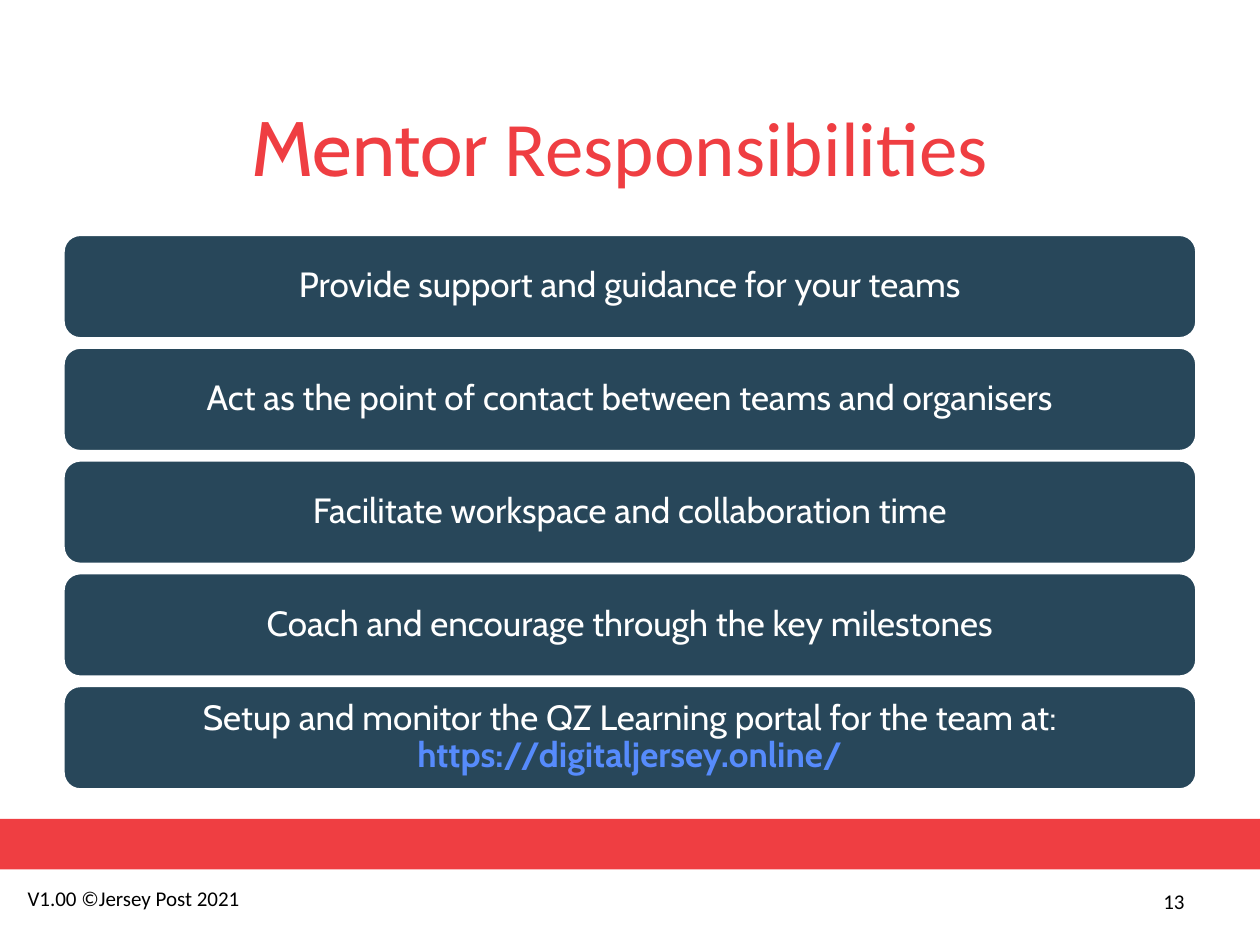
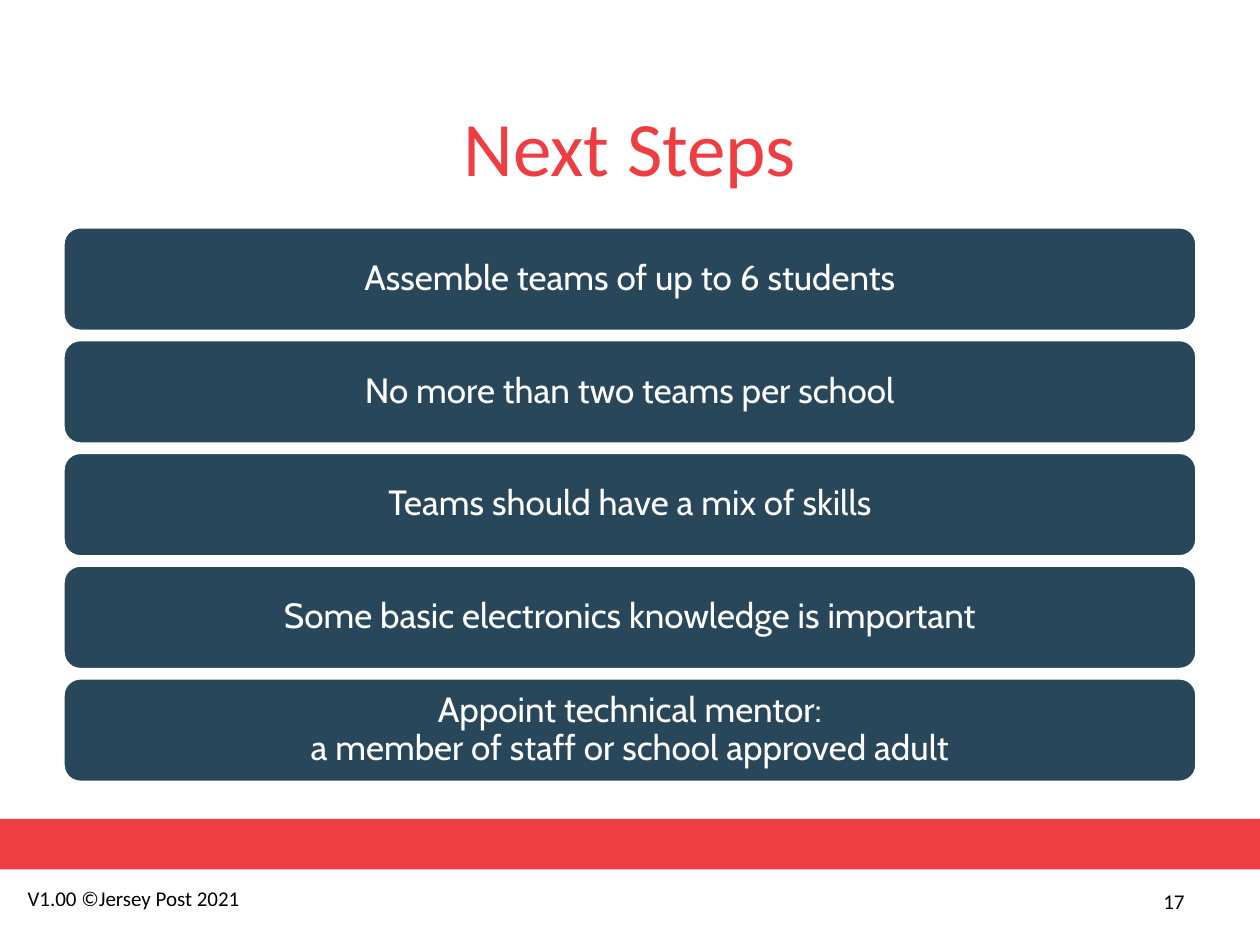
"""Build two slides of stacked statement bars for school teams and mentors."""
from dataclasses import dataclass

from pptx import Presentation
from pptx.dml.color import RGBColor
from pptx.enum.shapes import MSO_SHAPE
from pptx.enum.text import MSO_ANCHOR, PP_ALIGN
from pptx.util import Inches, Pt


@dataclass(frozen=True)
class Theme:
    red: str = "EF3E42"
    navy: str = "28475A"
    white: str = "FFFFFF"
    black: str = "000000"
    link: str = "568BFC"
    head_font: str = "Cabin"
    base_font: str = "Calibri"
    title_size: int = 44
    bar_size: int = 20
    footer_size: int = 12


THEME = Theme()
FOOTER = "V1.00 ©Jersey Post 2021"
LINK_STYLE = {"color": THEME.link, "bold": True}

SLIDES = [
    {
        "number": 13,
        "title": [("Mentor ", {"font": THEME.head_font}), ("Responsibilities", {})],
        "title_right_inset": 0.26,
        "top": 1.86,
        "bars": [
            [("Provide support and guidance for your teams", {})],
            [("Act as the point of contact between teams and organisers", {})],
            [("Facilitate workspace and collaboration time", {})],
            [("Coach and encourage through the key milestones", {})],
            [("Setup and monitor the QZ Learning portal for the team at: ", {}),
             ("https://digitaljersey.online/", LINK_STYLE)],
        ],
    },
    {
        "number": 17,
        "title": [("Next Steps", {})],
        "title_right_inset": 0.1,
        "top": 1.8,
        "bars": [
            [("Assemble teams of up to 6 students", {})],
            [("No more than two teams per school", {})],
            [("Teams should have a mix of skills", {})],
            [("Some basic electronics knowledge is important", {})],
            [("Appoint technical mentor:\va member of staff or school approved adult", {})],
        ],
    },
]

BAR_LEFT, BAR_WIDTH, BAR_HEIGHT = 0.5, 9, 0.83
STACK_HEIGHT = 4.41


def write(tf, runs, size, font, color, align):
    p = tf.paragraphs[0]
    p.text = "".join(text for text, _ in runs) if len(runs) == 1 else ""
    p.alignment = align
    if len(runs) > 1:
        for text, _ in runs:
            p.add_run().text = text
    styles = [style for _, style in runs]
    for i, r in enumerate(p.runs):
        style = styles[min(i, len(styles) - 1)]
        r.font.size = Pt(size)
        r.font.name = style.get("font", font)
        r.font.bold = style.get("bold", False)
        r.font.color.rgb = RGBColor.from_string(style.get("color", color))
    return p


def add_text(s, box, runs, size, color, align, anchor=MSO_ANCHOR.MIDDLE, wrap=True):
    tf = s.shapes.add_textbox(*map(Inches, box)).text_frame
    tf.word_wrap = wrap
    tf.vertical_anchor = anchor
    write(tf, runs, size, THEME.base_font, color, align)
    return tf


def add_block(s, kind, box, fill):
    sp = s.shapes.add_shape(kind, *map(Inches, box))
    sp.shadow.inherit = False
    sp.fill.solid()
    sp.fill.fore_color.rgb = RGBColor.from_string(fill)
    sp.line.fill.background()
    return sp


def add_bar(s, top, runs):
    sp = add_block(s, MSO_SHAPE.ROUNDED_RECTANGLE,
                   (BAR_LEFT, top, BAR_WIDTH, BAR_HEIGHT), THEME.navy)
    sp.line.color.rgb = RGBColor.from_string(THEME.white)
    sp.line.width = Pt(2)
    tf = sp.text_frame
    tf.word_wrap = True
    tf.vertical_anchor = MSO_ANCHOR.MIDDLE
    tf.margin_left = tf.margin_right = Inches(0.08)
    tf.margin_top = tf.margin_bottom = Inches(0.08)
    p = write(tf, runs, THEME.bar_size, THEME.head_font, THEME.white, PP_ALIGN.CENTER)
    p.line_spacing = 0.9


def add_frame(s, number):
    add_block(s, MSO_SHAPE.RECTANGLE, (0, 6.5, 10, 0.4), THEME.red)
    add_text(s, (0.12, 6.98, 1.91, 0.3), [(FOOTER, {})], THEME.footer_size,
             THEME.black, PP_ALIGN.LEFT, MSO_ANCHOR.TOP, wrap=False)
    add_text(s, (7.17, 6.95, 2.33, 0.4), [(str(number), {})], THEME.footer_size,
             THEME.black, PP_ALIGN.RIGHT)


def build_slide(prs, content):
    s = prs.slides.add_slide(prs.slide_layouts[6])
    add_frame(s, content["number"])
    tf = add_text(s, (0.5, 0.67, 9, 0.97), content["title"], THEME.title_size,
                  THEME.red, PP_ALIGN.CENTER)
    tf.margin_right = Inches(content["title_right_inset"])
    bars = content["bars"]
    step = (STACK_HEIGHT - BAR_HEIGHT) / (len(bars) - 1)
    for i, runs in enumerate(bars):
        add_bar(s, content["top"] + i * step, runs)


def main():
    prs = Presentation()
    prs.slide_width, prs.slide_height = Inches(10), Inches(7.5)
    for content in SLIDES:
        build_slide(prs, content)
    prs.save("out.pptx")


if __name__ == "__main__":
    main()
